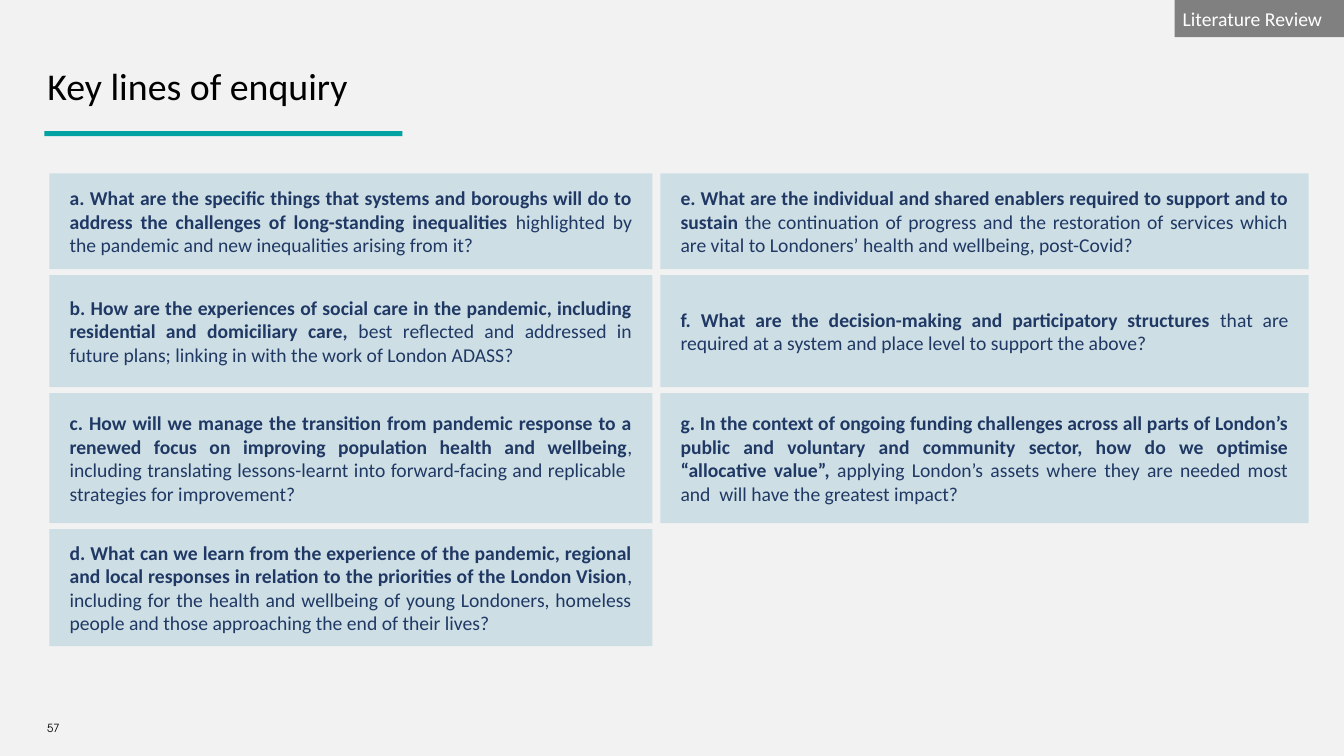
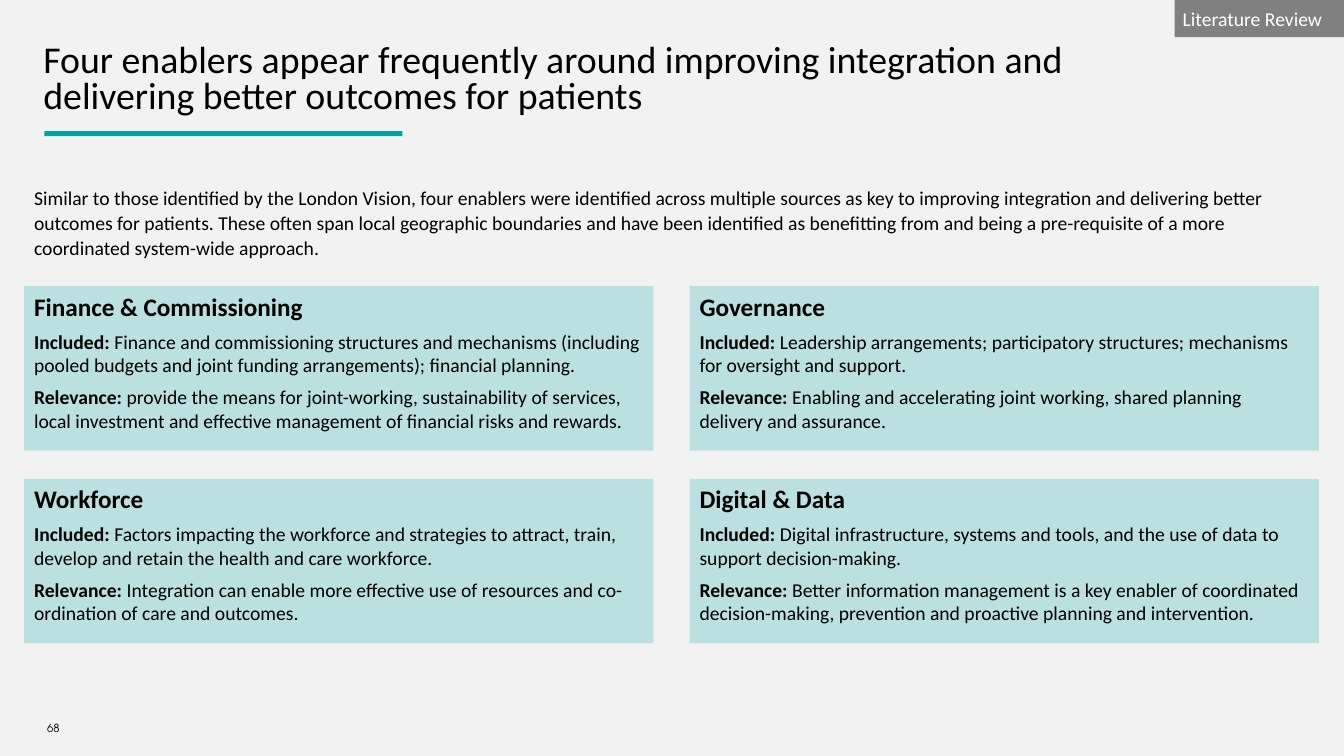
from lxml.etree import SubElement
from pptx import Presentation
from pptx.dml.color import RGBColor
from pptx.enum.shapes import MSO_SHAPE
from pptx.enum.text import MSO_ANCHOR, MSO_AUTO_SIZE, PP_ALIGN
from pptx.oxml.ns import qn
from pptx.util import Inches, Pt

COLOURS = {
    "background": "F2F2F2",
    "accent": "00A3A1",
    "tag": "808080",
    "question": "62A7C0",
    "enabler": "BBE0E0",
    "navy": "203864",
    "black": "000000",
    "white": "FFFFFF",
}
BODY_FONT = "Calibri"
NUMBER_FONT = "TeX Gyre Adventor"

# Each question is a bold opening followed by a plain remainder.
LEFT_QUESTIONS = [
    ("a. What are the specific things that systems and boroughs will do to address the "
     "challenges of long-standing inequalities ",
     "highlighted by the pandemic and new inequalities arising from it?"),
    ("b. How are the experiences of social care in the pandemic, including residential "
     "and domiciliary care, ",
     "best reflected and addressed in future plans; linking in with the work of London ADASS?"),
    ("c. How will we manage the transition from pandemic response to a renewed focus on "
     "improving population health and wellbeing",
     ", including translating lessons-learnt into forward-facing and replicable  strategies "
     "for improvement?"),
    ("d. What can we learn from the experience of the pandemic, regional and local responses "
     "in relation to the priorities of the London Vision",
     ", including for the health and wellbeing of young Londoners, homeless people and those "
     "approaching the end of their lives?"),
]
RIGHT_QUESTIONS = [
    ("e. What are the individual and shared enablers required to support and to sustain ",
     "the continuation of progress and the restoration of services which are vital to "
     "Londoners’ health and wellbeing, post-Covid?"),
    ("f. What are the decision-making and participatory structures ",
     "that are required at a system and place level to support the above?"),
    ("g. In the context of ongoing funding challenges across all parts of London’s public and "
     "voluntary and community sector, how do we optimise “allocative value”, ",
     "applying London’s assets where they are needed most and  will have the greatest impact?"),
]
QUESTION_COLUMNS = [(0.49, 5.98, LEFT_QUESTIONS), (6.55, 6.43, RIGHT_QUESTIONS)]
QUESTION_HEIGHTS = [0.95, 1.11, 1.29, 1.16]
QUESTION_TOP, QUESTION_GAP = 1.72, 0.06

INTRODUCTION = (
    "Similar to those identified by the London Vision, four enablers were identified across "
    "multiple sources as key to improving integration and delivering better outcomes for "
    "patients. These often span local geographic boundaries and have been identified as "
    "benefitting from and being a pre-requisite of a more coordinated system-wide approach."
)
# Heading, what is included, relevance.
ENABLERS = [
    ("Finance & Commissioning",
     "Finance and commissioning structures and mechanisms (including pooled budgets and joint "
     "funding arrangements); financial planning.",
     "provide the means for joint-working, sustainability of services, local investment and "
     "effective management of financial risks and rewards."),
    ("Governance",
     "Leadership arrangements; participatory structures; mechanisms for oversight and support.",
     "Enabling and accelerating joint working, shared planning delivery and assurance."),
    ("Workforce",
     "Factors impacting the workforce and strategies to attract, train, develop and retain the "
     "health and care workforce.",
     "Integration can enable more effective use of resources and co-ordination of care and "
     "outcomes."),
    ("Digital & Data",
     "Digital infrastructure, systems and tools, and the use of data to support "
     "decision-making.",
     "Better information management is a key enabler of coordinated decision-making, prevention "
     "and proactive planning and intervention."),
]
ENABLER_LEFT, ENABLER_TOP = 0.24, 2.84
ENABLER_WIDTH, ENABLER_HEIGHT = 6.24, 1.63
ENABLER_STEP_X, ENABLER_STEP_Y = 6.6, 1.91


def colour(name):
    return RGBColor.from_string(COLOURS[name])


class ReviewDeck:
    def __init__(self):
        self.deck = Presentation()
        self.deck.slide_width = Inches(13.33)
        self.deck.slide_height = Inches(7.5)
        self.page = None

    def add_page(self, number, title, title_area, anchor, line_spacing):
        """Start a slide with the title, rule, section tag and number all pages share."""
        self.page = self.deck.slides.add_slide(self.deck.slide_layouts[5])
        fill = self.page.background.fill
        fill.solid()
        fill.fore_color.rgb = colour("background")

        heading = self.page.shapes.title
        heading.left, heading.top, heading.width, heading.height = map(Inches, title_area)
        frame = self.frame(heading, anchor)
        self.paragraph(frame, [(title, False)], size=27, line_spacing=line_spacing)

        self.rectangle((0.44, 1.3, 3.55, 0.05), "accent")
        tag = self.rectangle((11.65, 0, 1.68, 0.37), "tag")
        frame = self.frame(tag, MSO_ANCHOR.MIDDLE, (0.08, 0.05))
        self.paragraph(frame, [("Literature Review", False)], ink="white")
        frame = self.text_box((0.37, 7.13, 0.51, 0.19), MSO_ANCHOR.MIDDLE, (0.1, 0))
        self.paragraph(frame, [(str(number), False)], size=8, font=NUMBER_FONT)

    def rectangle(self, area, fill, opacity=None):
        box = self.page.shapes.add_shape(MSO_SHAPE.RECTANGLE, *map(Inches, area))
        box.shadow.inherit = False
        box.line.fill.background()
        box.fill.solid()
        box.fill.fore_color.rgb = colour(fill)
        if opacity is not None:
            shade = box.fill._xPr.find(qn("a:solidFill"))[0]
            SubElement(shade, qn("a:alpha")).set("val", str(opacity * 1000))
        return box

    def text_box(self, area, anchor=MSO_ANCHOR.TOP, insets=(0.1, 0.05)):
        return self.frame(self.page.shapes.add_textbox(*map(Inches, area)), anchor, insets)

    def frame(self, box, anchor=MSO_ANCHOR.TOP, insets=(0.1, 0.05)):
        """Prepare the text frame of a box; insets are (sides, top and bottom)."""
        frame = box.text_frame
        frame.word_wrap = True
        frame.auto_size = MSO_AUTO_SIZE.NONE
        frame.vertical_anchor = anchor
        frame.margin_left = frame.margin_right = Inches(insets[0])
        frame.margin_top = frame.margin_bottom = Inches(insets[1])
        return frame

    def paragraph(self, frame, spans, size=14, ink="black", font=BODY_FONT,
                  align=PP_ALIGN.LEFT, line_spacing=1.0, space_after=0):
        """Add a paragraph of (text, bold) spans, using the empty first one if free."""
        first = frame.paragraphs[0]
        para = frame.add_paragraph() if first.runs else first
        para.alignment = align
        para.line_spacing = line_spacing
        para.space_before = Pt(0)
        para.space_after = Pt(space_after)
        for text, bold in spans:
            span = para.add_run()
            span.text = text
            span.font.name = font
            span.font.size = Pt(size)
            span.font.bold = bold
            span.font.color.rgb = colour(ink)

    def question_card(self, area, opening, remainder):
        card = self.rectangle(area, "question", opacity=25)
        frame = self.frame(card, MSO_ANCHOR.MIDDLE, (0.2, 0.2))
        self.paragraph(frame, [(opening, True), (remainder, False)], ink="navy",
                       align=PP_ALIGN.JUSTIFY)

    def enabler_card(self, area, heading, included, relevance):
        frame = self.frame(self.rectangle(area, "enabler"))
        self.paragraph(frame, [(heading, True)], size=18, space_after=6)
        for label, text in (("Included: ", included), ("Relevance: ", relevance)):
            self.paragraph(frame, [(label, True), (text, False)], space_after=6)


def add_enquiry_page(review):
    review.add_page(57, "Key lines of enquiry", (0.37, 0.47, 11.57, 0.81),
                    MSO_ANCHOR.MIDDLE, 0.9)
    for left, width, questions in QUESTION_COLUMNS:
        top = QUESTION_TOP
        for height, question in zip(QUESTION_HEIGHTS, questions):
            review.question_card((left, top, width, height), *question)
            top += height + QUESTION_GAP


def add_enablers_page(review):
    review.add_page(68, "Four enablers appear frequently around improving integration and "
                    "delivering better outcomes for patients",
                    (0.33, 0.39, 10.47, 1.03), MSO_ANCHOR.TOP, 0.8)
    frame = review.text_box((0.24, 1.78, 12.84, 0.89))
    review.paragraph(frame, [(INTRODUCTION, False)], line_spacing=1.07)
    for index, enabler in enumerate(ENABLERS):
        row, column = divmod(index, 2)
        area = (ENABLER_LEFT + column * ENABLER_STEP_X, ENABLER_TOP + row * ENABLER_STEP_Y,
                ENABLER_WIDTH, ENABLER_HEIGHT)
        review.enabler_card(area, *enabler)


def main():
    review = ReviewDeck()
    add_enquiry_page(review)
    add_enablers_page(review)
    review.deck.save("out.pptx")


if __name__ == "__main__":
    main()
